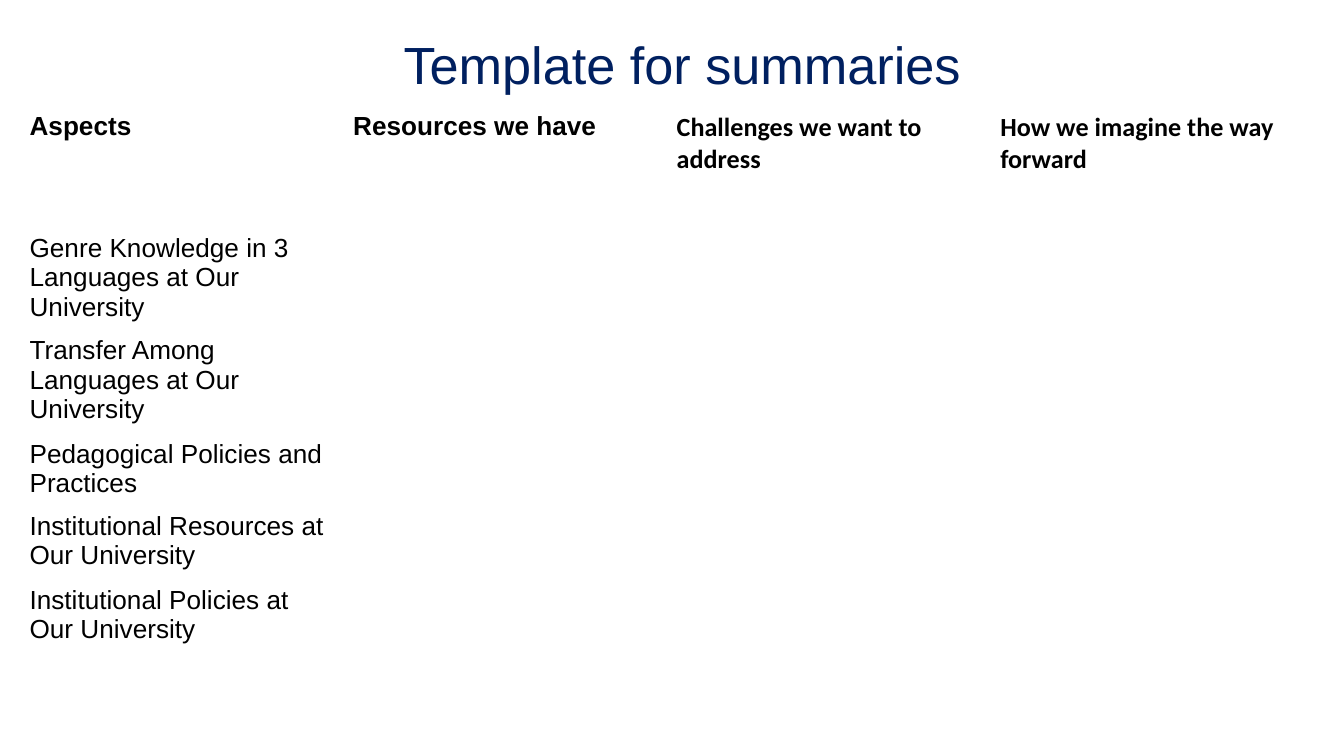
import pptx
import pptx.util
import pptx.dml.color
import pptx.enum.text

Inches = pptx.util.Inches

# Content
TITLE = "Template for summaries"
HEADERS = [
    ("Aspects", "Arial"),
    ("Resources we have", "Arial"),
    ("Challenges we want to address", "Calibri"),
    ("How we imagine the way forward", "Calibri"),
]
ASPECTS = [
    ("Genre Knowledge in 3 Languages at Our University", 0.76),
    ("Transfer Among Languages at Our University", 0.77),
    ("Pedagogical Policies and Practices", 0.5),
    ("Institutional Resources at Our University", 0.55),
    ("Institutional Policies at Our University", 0.59),
]
SLIDE_WIDTH = 10
HEADER_HEIGHT = 0.91
TABLE_LEFT, TABLE_TOP, TABLE_WIDTH = 0.12, 0.78, 9.63


def color(value):
    return pptx.dml.color.RGBColor.from_string(value)


def add_run(paragraph, text, size, font, fill, bold=False):
    run = paragraph.add_run()
    run.text = text
    run.font.size = pptx.util.Pt(size)
    run.font.name = font
    run.font.bold = bold
    run.font.color.rgb = color(fill)


# Slide, 16:9
presentation = pptx.Presentation()
presentation.slide_width = Inches(SLIDE_WIDTH)
presentation.slide_height = Inches(SLIDE_WIDTH * 9 / 16)
slide = presentation.slides.add_slide(presentation.slide_layouts[5])
slide.background.fill.solid()
slide.background.fill.fore_color.rgb = color("FFFFFF")

# Title
title = slide.shapes.title
title.left, title.top = Inches(0.26), Inches(0.14)
title.width, title.height = Inches(9.63), Inches(0.63)
frame = title.text_frame
frame.word_wrap = True
frame.auto_size = pptx.enum.text.MSO_AUTO_SIZE.NONE
frame.vertical_anchor = pptx.enum.text.MSO_ANCHOR.TOP
frame.margin_left = frame.margin_right = Inches(0.1)
frame.margin_top = frame.margin_bottom = Inches(0.1)
paragraph = frame.paragraphs[0]
paragraph.alignment = pptx.enum.text.PP_ALIGN.CENTER
add_run(paragraph, TITLE, 28, "Arial", "002060")

# Table
heights = [HEADER_HEIGHT] + [height for _, height in ASPECTS]
table = slide.shapes.add_table(
    len(heights), len(HEADERS), Inches(TABLE_LEFT), Inches(TABLE_TOP),
    Inches(TABLE_WIDTH), Inches(sum(heights))).table
table.first_row = table.horz_banding = False
for column in table.columns:
    column.width = Inches(TABLE_WIDTH / len(HEADERS))
for row, height in zip(table.rows, heights):
    row.height = Inches(height)
for cell in table.iter_cells():
    cell.fill.background()
    cell.text_frame.paragraphs[0].font.size = pptx.util.Pt(14)

# Table text
for index, (text, font) in enumerate(HEADERS):
    paragraph = table.cell(0, index).text_frame.paragraphs[0]
    add_run(paragraph, text, 14, font, "000000", bold=True)
for index, (text, _) in enumerate(ASPECTS, start=1):
    paragraph = table.cell(index, 0).text_frame.paragraphs[0]
    add_run(paragraph, text, 14, "Arial", "000000")

presentation.save("out.pptx")
